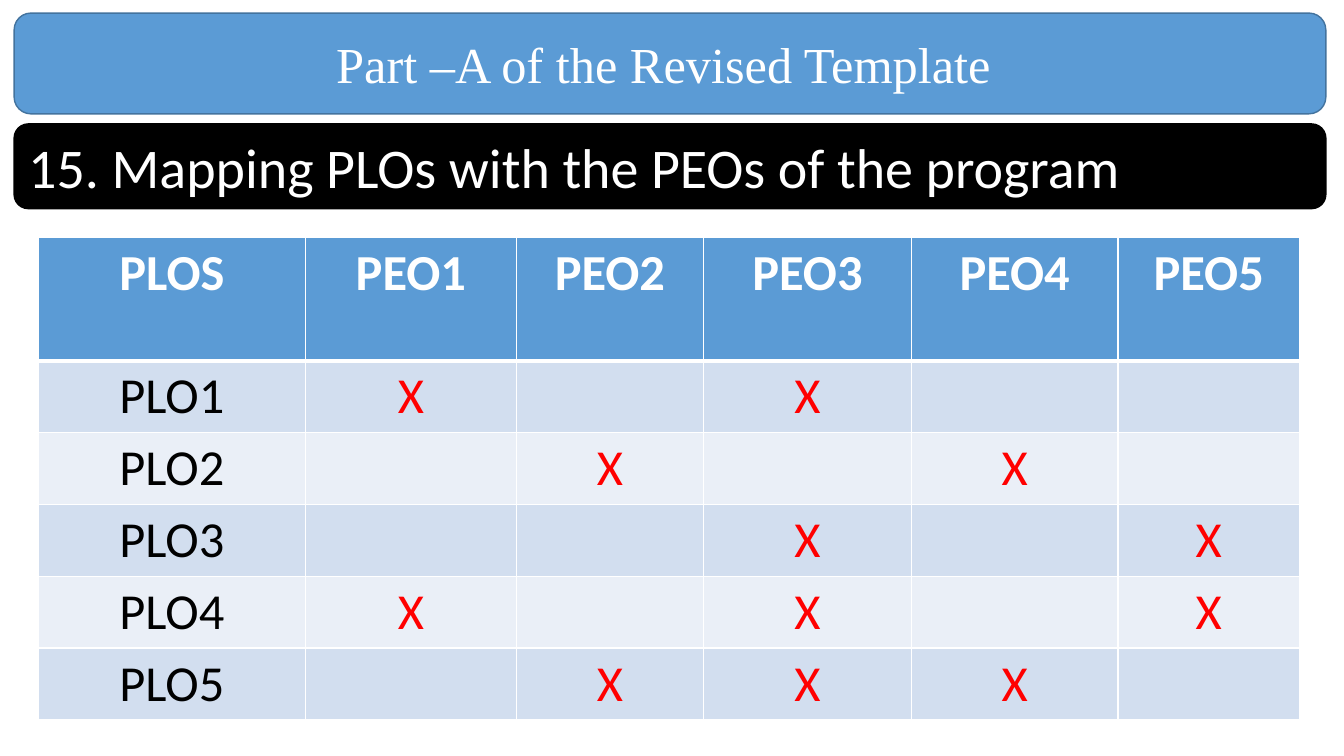
from lxml import etree
from pptx import Presentation
from pptx.dml.color import RGBColor
from pptx.enum.shapes import MSO_SHAPE
from pptx.enum.text import MSO_ANCHOR, PP_ALIGN
from pptx.oxml.ns import qn
from pptx.util import Inches, Pt

ROUNDED = MSO_SHAPE.ROUNDED_RECTANGLE
MIDDLE = MSO_ANCHOR.MIDDLE
LEFT, CENTER = PP_ALIGN.LEFT, PP_ALIGN.CENTER

THEME = {
    "blue": RGBColor.from_string("5B9BD5"),
    "blue_line": RGBColor.from_string("43739E"),
    "black": RGBColor.from_string("000000"),
    "white": RGBColor.from_string("FFFFFF"),
    "red": RGBColor.from_string("FF0000"),
    "bands": [RGBColor.from_string("D2DEEF"), RGBColor.from_string("EAEFF7")],
    "body_font": "Calibri",
    "title_font": "Times New Roman",
    "size": 36,
    "heading_size": 40,
}


def write(tf, text, color, size=THEME["size"], font=THEME["body_font"], bold=False, align=CENTER):
    p = tf.paragraphs[0]
    p.alignment = align
    r = p.add_run()
    r.text = text
    r.font.name = font
    r.font.size = Pt(size)
    r.font.bold = bold
    r.font.color.rgb = color


def set_borders(cell, widths):
    tc_pr = cell._tc.get_or_add_tcPr()
    for side, width in widths.items():
        ln = etree.SubElement(tc_pr, qn(f"a:ln{side}"), w=str(Pt(width)))
        fill = etree.SubElement(ln, qn("a:solidFill"))
        etree.SubElement(fill, qn("a:srgbClr"), val=str(THEME["white"]))


prs = Presentation()
prs.slide_width = Inches(13.33)
prs.slide_height = Inches(7.5)
s = prs.slides.add_slide(prs.slide_layouts[6])

banners = [
    (0.13, 1, THEME["blue"], THEME["blue_line"], "Part –A of the Revised Template ",
     {"font": THEME["title_font"]}),
    (1.23, 0.84, THEME["black"], THEME["black"], "15. Mapping PLOs with the PEOs of the program",
     {"size": THEME["heading_size"], "align": LEFT}),
]
for top, height, fill, line, text, style in banners:
    sp = s.shapes.add_shape(ROUNDED, Inches(0.14), Inches(top), Inches(13.01), Inches(height))
    sp.shadow.inherit = False
    sp.fill.solid()
    sp.fill.fore_color.rgb = fill
    sp.line.color.rgb = line
    sp.line.width = Pt(1)
    tf = sp.text_frame
    tf.word_wrap = True
    tf.vertical_anchor = MIDDLE
    write(tf, text, THEME["white"], **style)

col_widths = [2.65, 2.09, 1.86, 2.06, 2.05, 1.8]
row_heights = [1.22] + [0.71] * 5
plo_to_peos = {1: {1, 3}, 2: {2, 4}, 3: {3, 5}, 4: {1, 3, 5}, 5: {2, 3, 4}}

rows = [["PLOS"] + [f"PEO{peo}" for peo in range(1, 6)]]
for plo, peos in plo_to_peos.items():
    rows.append([f"PLO{plo}"] + ["X" if peo in peos else "" for peo in range(1, 6)])

table = s.shapes.add_table(
    len(rows), len(col_widths), Inches(0.38), Inches(2.36), Inches(12.5), Inches(4.77)
).table
for column, width in zip(table.columns, col_widths):
    column.width = Inches(width)
for row, height in zip(table.rows, row_heights):
    row.height = Inches(height)

for i, row in enumerate(rows):
    header = i == 0
    for j, text in enumerate(row):
        cell = table.cell(i, j)
        set_borders(cell, {"L": 1, "R": 1, "T": 3 if i == 1 else 1, "B": 3 if header else 1})
        cell.fill.solid()
        cell.fill.fore_color.rgb = THEME["blue"] if header else THEME["bands"][(i - 1) % 2]
        if text:
            color = THEME["white"] if header else THEME["black"] if j == 0 else THEME["red"]
            write(cell.text_frame, text, color, bold=header)

prs.save("out.pptx")
